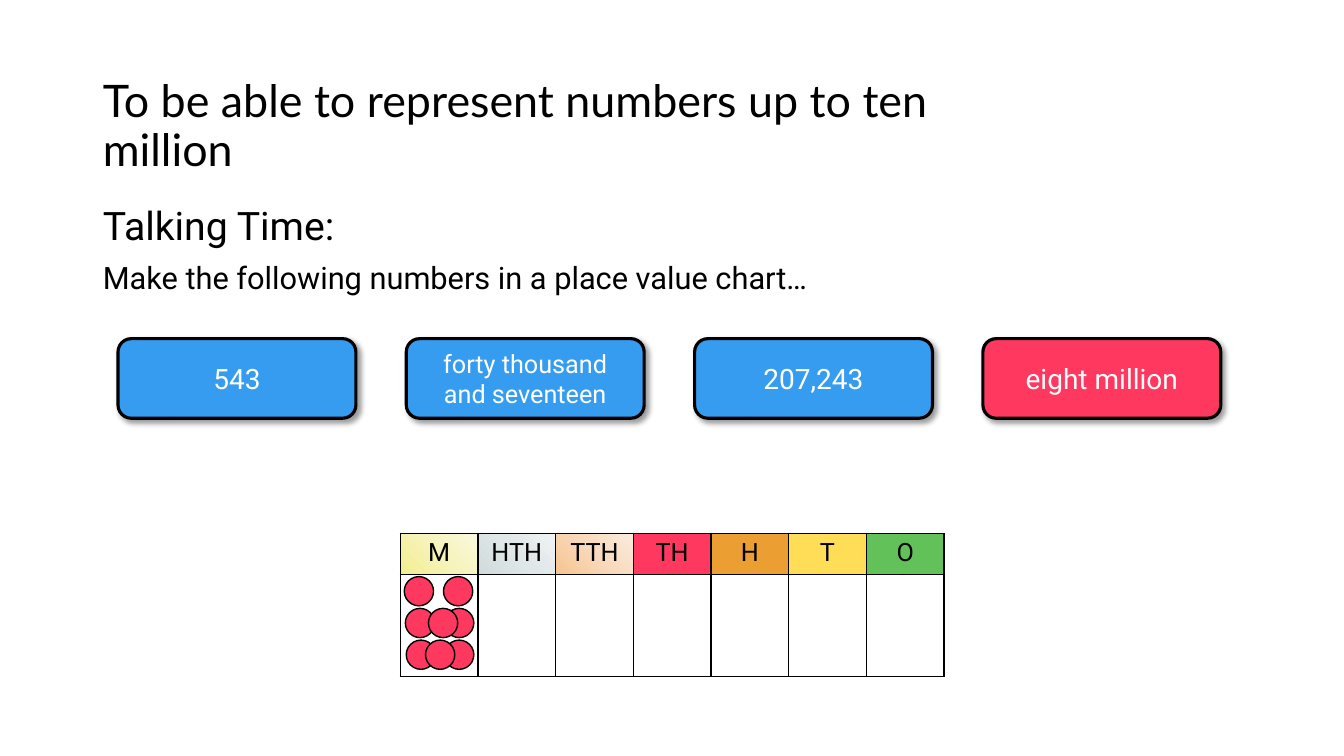
from pptx import Presentation
from pptx.dml.color import RGBColor
from pptx.enum.shapes import MSO_SHAPE
from pptx.enum.text import MSO_ANCHOR, MSO_AUTO_SIZE, PP_ALIGN
from pptx.oxml import parse_xml
from pptx.oxml.ns import nsdecls
from pptx.util import Inches, Pt

LEFT, CENTER = PP_ALIGN.LEFT, PP_ALIGN.CENTER
MIDDLE, TOP = MSO_ANCHOR.MIDDLE, MSO_ANCHOR.TOP
NO_FIT = MSO_AUTO_SIZE.NONE
ROUNDED, CIRCLE = MSO_SHAPE.ROUNDED_RECTANGLE, MSO_SHAPE.OVAL
SLIDE_WIDTH, SLIDE_HEIGHT = Inches(13.33), Inches(7.5)


class Theme:
    black, white = "000000", "FFFFFF"
    blue, red = "369CEF", "FF3860"
    title = {"name": "Lato", "size": Pt(32)}
    heading = {"name": "Roboto", "size": Pt(28)}
    prompt = {"name": "Roboto", "size": Pt(22)}
    card = {"name": "Roboto", "size": Pt(20)}
    small = {"name": "Roboto", "size": Pt(18)}
    card_line, thin_line = Pt(2.25), Pt(1)


# Positions are percentages of the slide's width and height
MARGIN = 6.9
TITLE_AREA = (MARGIN, 7.2, 72, 19.33)
BODY_AREA = (MARGIN, 26.67, 86.25, 63.5)
CARD_LEFT, CARD_TOP, CARD_STEP = 8.78, 44.8, 21.45
CARD_SIZE = (17.7, 10.53)
CHART_LEFT, CHART_TOP = 29.78, 70.53
PLACE_WIDTH, HEADER_HEIGHT, COUNTER_ROW_HEIGHT = 5.78, 5.47, 13.5
COUNTER_SIZE = (2.18, 3.87)
COUNTER_TOP, COUNTER_STEP = 76.27, 4.2

CARDS = [
    ("543", Theme.blue, Theme.card),
    ("forty thousand and seventeen", Theme.blue, Theme.small),
    ("207,243", Theme.blue, Theme.card),
    ("eight million", Theme.red, Theme.card),
]
# Each place has one colour, or the stops of a radial gradient
PLACES = [
    ("M", ["F3EE8E", "F6F3BB", "FAF8DE"]),
    ("HTH", ["CFDBDC", "E0E7E8", "EFF3F3"]),
    ("TTH", ["F7C48E", "F8D9BB", "FBECDE"]),
    ("TH", [Theme.red]),
    ("H", ["EB9E31"]),
    ("T", ["FFDD57"]),
    ("O", ["62C159"]),
]
# Counter offsets within the millions column, row by row
COUNTER_ROWS = [(0.3, 3.22), (0.38, 3.3, 2.1), (0.45, 3.3, 1.88)]


def across(percent):
    return round(SLIDE_WIDTH * percent / 100)


def down(percent):
    return round(SLIDE_HEIGHT * percent / 100)


def area(left, top, width, height):
    return across(left), down(top), across(width), down(height)


def set_all(target, values):
    for name, value in values.items():
        setattr(target, name, value)


def write(para, text, font, color=Theme.black, **layout):
    span = para.add_run()
    span.text = text
    set_all(span.font, font)
    span.font.color.rgb = RGBColor.from_string(color)
    set_all(para, layout)


def move(placeholder, place, anchor):
    left, top, width, height = area(*place)
    set_all(placeholder, {"left": left, "top": top, "width": width, "height": height})
    set_all(placeholder.text_frame, {
        "word_wrap": True, "auto_size": NO_FIT, "vertical_anchor": anchor})
    return placeholder.text_frame


def add_headings(page):
    frame = move(page.shapes.title, TITLE_AREA, MIDDLE)
    write(frame.paragraphs[0], "To be able to represent numbers up to ten million",
          Theme.title, alignment=LEFT, line_spacing=0.9)

    frame = move(page.placeholders[1], BODY_AREA, TOP)
    lines = [("Talking Time:", Theme.heading, 0),
             ("Make the following numbers in a place value chart…", Theme.prompt, 10)]
    for index, (text, font, gap) in enumerate(lines):
        para = frame.add_paragraph() if index else frame.paragraphs[0]
        properties = para._p.get_or_add_pPr()
        set_no_bullet(properties)
        write(para, text, font, alignment=LEFT, line_spacing=0.9, space_before=Pt(gap))


def set_no_bullet(properties):
    properties.set("marL", "0")
    properties.set("indent", "0")
    properties.append(parse_xml(f'<a:buNone {nsdecls("a")}/>'))


def add_outlined(page, kind, place, fill, line_width):
    shape = page.shapes.add_shape(kind, *area(*place))
    shape.shadow.inherit = False
    shape.fill.solid()
    shape.fill.fore_color.rgb = RGBColor.from_string(fill)
    shape.line.color.rgb = RGBColor.from_string(Theme.black)
    shape.line.width = line_width
    return shape


def add_card(page, column, text, fill, font):
    place = (CARD_LEFT + column * CARD_STEP, CARD_TOP, *CARD_SIZE)
    card = add_outlined(page, ROUNDED, place, fill, Theme.card_line)
    effects = card._element.spPr.find(
        "{http://schemas.openxmlformats.org/drawingml/2006/main}effectLst")
    effects.append(parse_xml(
        f'<a:outerShdw {nsdecls("a")} blurRad="{Pt(4)}" dist="{Pt(3)}" dir="2700000" '
        f'algn="tl" rotWithShape="0"><a:srgbClr val="{Theme.black}">'
        '<a:alpha val="40000"/></a:srgbClr></a:outerShdw>'))
    set_all(card.text_frame, {"word_wrap": True, "vertical_anchor": MIDDLE})
    write(card.text_frame.paragraphs[0], text, font, Theme.white, alignment=CENTER)


def format_cell(cell, colors):
    properties = cell._tc.get_or_add_tcPr()
    for side in "LRTB":
        properties.append(parse_xml(
            f'<a:ln{side} {nsdecls("a")} w="{Theme.thin_line}"><a:solidFill>'
            f'<a:srgbClr val="{Theme.black}"/></a:solidFill></a:ln{side}>'))
    if len(colors) == 1:
        cell.fill.solid()
        cell.fill.fore_color.rgb = RGBColor.from_string(colors[0])
        return
    stops = "".join(
        f'<a:gs pos="{index * 50000}"><a:srgbClr val="{color}"/></a:gs>'
        for index, color in enumerate(colors))
    properties.append(parse_xml(
        f'<a:gradFill {nsdecls("a")}><a:gsLst>{stops}</a:gsLst><a:path path="circle">'
        '<a:fillToRect t="100000" r="100000"/></a:path></a:gradFill>'))


def add_place_value_chart(page):
    heights = (HEADER_HEIGHT, COUNTER_ROW_HEIGHT)
    place = (CHART_LEFT, CHART_TOP, PLACE_WIDTH * len(PLACES), sum(heights))
    table = page.shapes.add_table(len(heights), len(PLACES), *area(*place)).table
    set_all(table, {"first_row": False, "horz_banding": False})
    for row, height in zip(table.rows, heights):
        row.height = down(height)
    for column, (name, colors) in enumerate(PLACES):
        table.columns[column].width = across(PLACE_WIDTH)
        header = table.cell(0, column)
        format_cell(header, colors)
        write(header.text_frame.paragraphs[0], name, Theme.small, alignment=CENTER)
        format_cell(table.cell(1, column), [Theme.white])


def add_counters(page):
    for row, offsets in enumerate(COUNTER_ROWS):
        for offset in offsets:
            place = (CHART_LEFT + offset, COUNTER_TOP + row * COUNTER_STEP, *COUNTER_SIZE)
            add_outlined(page, CIRCLE, place, Theme.red, Theme.thin_line)


def main():
    deck = Presentation()
    set_all(deck, {"slide_width": SLIDE_WIDTH, "slide_height": SLIDE_HEIGHT})
    page = deck.slides.add_slide(deck.slide_layouts[1])
    add_headings(page)
    add_place_value_chart(page)
    for column, (text, fill, font) in enumerate(CARDS):
        add_card(page, column, text, fill, font)
    add_counters(page)
    deck.save("out.pptx")


if __name__ == "__main__":
    main()
